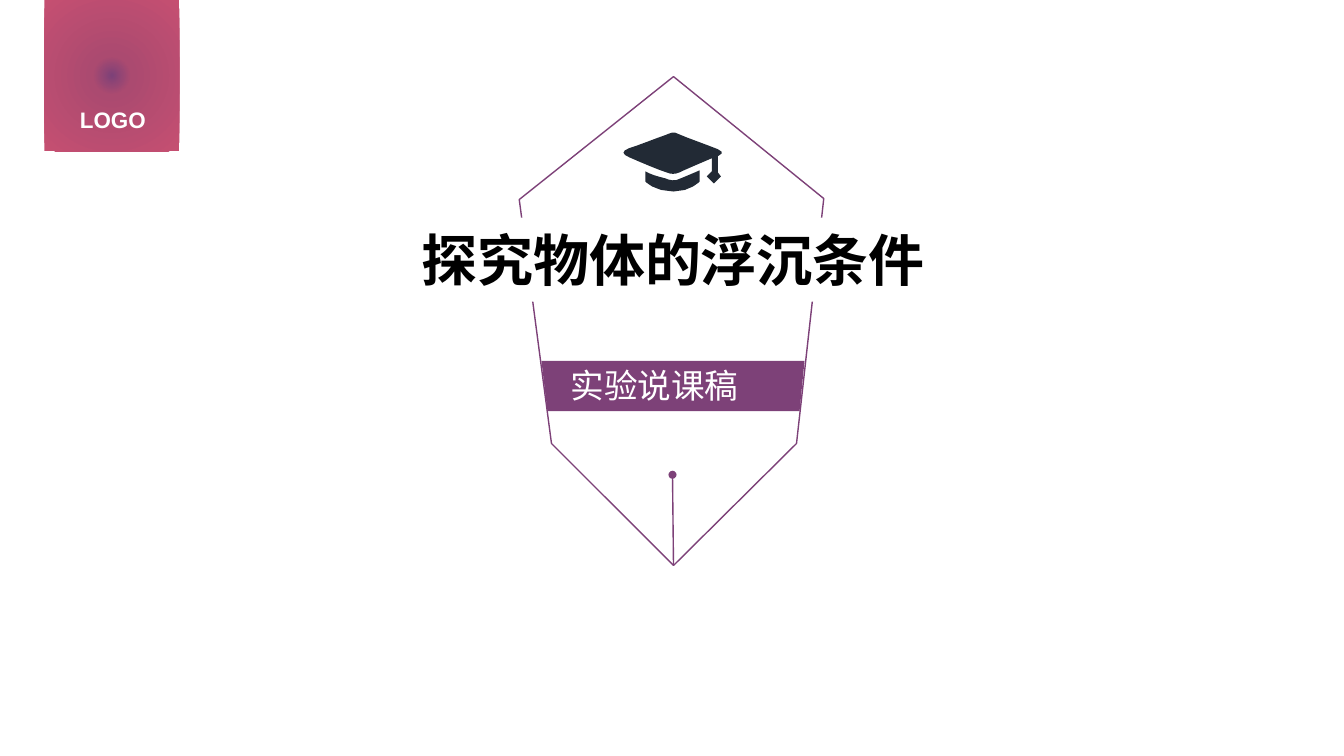
from lxml import etree
from pptx import Presentation
from pptx.dml.color import RGBColor
from pptx.enum import shapes, text
from pptx.oxml import ns
from pptx import util as u

# Content: (wording, box, size, bold, colour, alignment)
WIDTH, HEIGHT = 13.33, 7.5
FONT = "Arial"
PURPLE, NAVY, WHITE, BLACK = "7D4178", "222A35", "FFFFFF", "000000"
BADGE_STOPS = [(0, PURPLE), (19, "AB4A70"), (100, "C54F71")]
CENTRE, LEFT = text.PP_ALIGN.CENTER, text.PP_ALIGN.LEFT
BADGE_LABEL = ("LOGO", (0.69, 1, 0.86, 0.37), 16, True, WHITE, CENTRE)
SUBTITLE = ("实验说课稿", (5.56, 3.57, 1.88, 0.5), 24, False, WHITE, LEFT)
TITLE = ("探究物体的浮沉条件", (4.05, 2.19, 5.25, 0.77), 40, True, BLACK, CENTRE)

# Outlines: a pair is a corner, six numbers are a Bézier curve
BADGE = (0.44, 0, 1.34, 1.5)
AXIS, TIP = 6.68, 5.61
PEN_NIB = [(5.15, 1.98), (AXIS, 0.76), (8.17, 1.97), (7.9, 4.4), (AXIS, TIP), (5.47, 4.4)]
RIBBON = [(5.37, 3.58), (7.98, 3.58), (7.93, 4.08), (5.43, 4.08)]
SLIT_TOP, DOT_SIZE = (6.67, 4.69), 0.08
CAP_BOARD = [
    (7.12, 1.55), (7.12, 1.71), (7.15, 1.75), (7.08, 1.82), (7.01, 1.75),
    (7.06, 1.7), (7.06, 1.57),
    (6.85, 1.66, 6.78, 1.69, 6.74, 1.71), (6.69, 1.73, 6.66, 1.73, 6.61, 1.71),
    (6.57, 1.7, 6.35, 1.61, 6.24, 1.56), (6.17, 1.53, 6.16, 1.5, 6.24, 1.47),
    (6.34, 1.44, 6.51, 1.37, 6.6, 1.34), (6.65, 1.32, 6.68, 1.3, 6.73, 1.33),
    (6.82, 1.37, 7.02, 1.44, 7.12, 1.48), (7.2, 1.52, 7.14, 1.53, 7.12, 1.55),
]
CAP_BASE = [
    (6.75, 1.77), (6.8, 1.75, 6.87, 1.72, 6.94, 1.69), (6.94, 1.8),
    (6.94, 1.8, 6.85, 1.9, 6.68, 1.9), (6.49, 1.9, 6.4, 1.8, 6.4, 1.8),
    (6.4, 1.7), (6.45, 1.73, 6.52, 1.75, 6.6, 1.77),
    (6.64, 1.79, 6.7, 1.8, 6.75, 1.77),
]
CURVE_STEPS = 4


def colour(value):
    return RGBColor.from_string(value)


def inches(values):
    return [u.Inches(value) for value in values]


def paint(shape, fill=None, line=None):
    shape.shadow.inherit = False
    if fill:
        shape.fill.solid()
        shape.fill.fore_color.rgb = colour(fill)
    else:
        shape.fill.background()
    if line:
        shape.line.color.rgb = colour(line)
        shape.line.width = u.Pt(1)
    else:
        shape.line.fill.background()


def flatten(outline):
    points = [outline[0]]
    for part in outline[1:]:
        if len(part) == 2:
            points.append(part)
            continue
        anchors = [points[-1], part[:2], part[2:4], part[4:]]
        for step in range(1, CURVE_STEPS + 1):
            t = step / CURVE_STEPS
            weights = ((1 - t) ** 3, 3 * t * (1 - t) ** 2, 3 * t * t * (1 - t), t ** 3)
            points.append(tuple(sum(w * anchor[axis] for w, anchor in zip(weights, anchors))
                                for axis in (0, 1)))
    return points


def add_outline(slide, outlines, **style):
    contours = [[inches(point) for point in flatten(outline)] for outline in outlines]
    builder = slide.shapes.build_freeform(*contours[0][0])
    for index, points in enumerate(contours):
        if index:
            builder.move_to(*points[0])
        builder.add_line_segments(points[1:], close=True)
    paint(builder.convert_to_shape(), **style)


def write(shape, content):
    wording, box, size, bold, ink, alignment = content
    shape.left, shape.top, shape.width, shape.height = inches(box)
    frame = shape.text_frame
    frame.word_wrap = False
    frame.auto_size = text.MSO_AUTO_SIZE.SHAPE_TO_FIT_TEXT
    paragraph = frame.paragraphs[0]
    paragraph.alignment = alignment
    run = paragraph.add_run()
    run.text = wording
    run.font.name, run.font.size, run.font.bold = FONT, u.Pt(size), bold
    run.font.color.rgb = colour(ink)


def add_text(slide, content):
    box = slide.shapes.add_textbox(*inches(content[1]))
    write(box, content)
    return box


def add_badge(slide):
    badge = slide.shapes.add_shape(shapes.MSO_SHAPE.RECTANGLE, *inches(BADGE))
    paint(badge, fill=PURPLE)
    solid = badge._element.spPr.find(ns.qn("a:solidFill"))
    stops = "".join(f'<a:gs pos="{share * 1000}"><a:srgbClr val="{value}"/></a:gs>'
                    for share, value in BADGE_STOPS)
    gradient = etree.fromstring(
        f'<a:gradFill {ns.nsdecls("a")}><a:gsLst>{stops}</a:gsLst><a:path path="circle">'
        '<a:fillToRect l="50000" t="50000" r="50000" b="50000"/></a:path></a:gradFill>')
    solid.getparent().replace(solid, gradient)


def main():
    presentation = Presentation()
    presentation.slide_width, presentation.slide_height = inches((WIDTH, HEIGHT))
    slide = presentation.slides.add_slide(presentation.slide_layouts[5])

    # Corner badge
    add_badge(slide)
    add_text(slide, BADGE_LABEL)

    # Pen nib with its ribbon
    add_outline(slide, [PEN_NIB], line=PURPLE)
    add_outline(slide, [RIBBON], fill=PURPLE)
    subtitle = add_text(slide, SUBTITLE)

    # Title, placed over the nib outline
    title = slide.shapes.title
    write(title, TITLE)
    title.fill.solid()
    title.fill.fore_color.rgb = colour(WHITE)
    subtitle._element.addnext(title._element)

    # Slit and breather hole
    slit = slide.shapes.add_connector(shapes.MSO_CONNECTOR.STRAIGHT,
                                      *inches((AXIS, TIP, *SLIT_TOP)))
    slit.line.color.rgb = colour(PURPLE)
    slit.line.width = u.Pt(1)
    etree.SubElement(slit._element.spPr, ns.qn("a:effectLst"))
    dot_left, dot_top = SLIT_TOP[0] - DOT_SIZE / 2, SLIT_TOP[1] - DOT_SIZE / 4
    dot = slide.shapes.add_shape(shapes.MSO_SHAPE.OVAL,
                                 *inches((dot_left, dot_top, DOT_SIZE, DOT_SIZE)))
    paint(dot, fill=PURPLE)

    # Graduation cap
    add_outline(slide, [CAP_BOARD, CAP_BASE], fill=NAVY)
    presentation.save("out.pptx")


if __name__ == "__main__":
    main()
